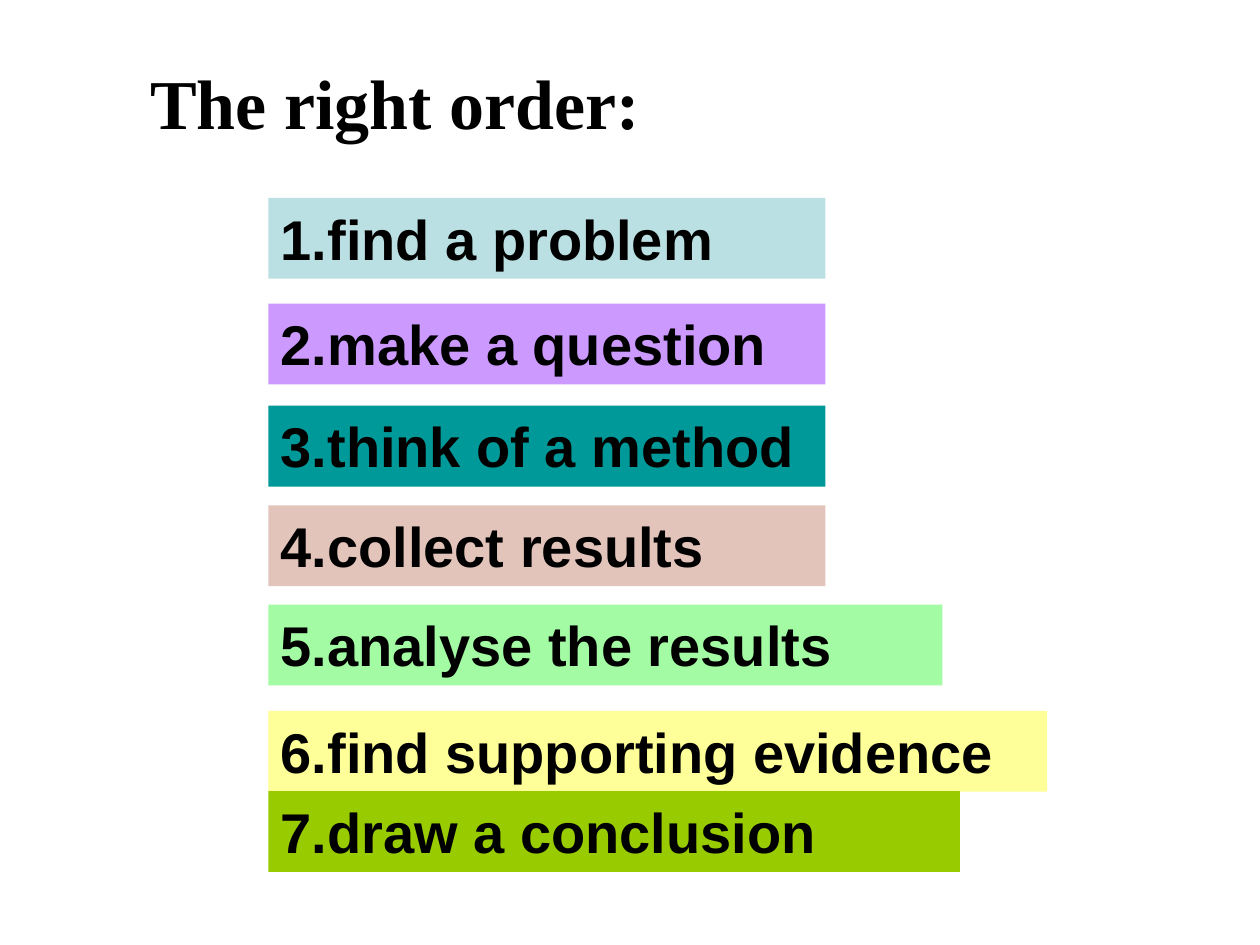
from dataclasses import dataclass

from pptx import Presentation
from pptx.dml.color import RGBColor
from pptx.enum.shapes import MSO_SHAPE
from pptx.enum.text import MSO_ANCHOR, MSO_AUTO_SIZE, PP_ALIGN
from pptx.slide import Slide
from pptx.text.text import TextFrame
from pptx.util import Cm, Pt

COLOURS = {
    "text": "000000",
    "problem": "BBE0E3",
    "question": "CC99FF",
    "method": "009999",
    "results": "E3C4BB",
    "analysis": "A3FBA3",
    "evidence": "FFFF99",
    "conclusion": "99CC00",
}
STEP_LEFT = 5.41
STEP_HEIGHT = 1.63


@dataclass(frozen=True)
class Step:
    wording: str
    colour: str
    top: float
    width: float = 11.23


STEPS = [
    Step("find a problem", "problem", 3.99),
    Step("make a question", "question", 6.12),
    Step("think of a method", "method", 8.18),
    Step("collect results", "results", 10.19),
    Step("analyse the results", "analysis", 12.19, 13.59),
    Step("find supporting evidence", "evidence", 14.33, 15.7),
    Step("draw a conclusion", "conclusion", 15.95, 13.94),
]


def write_line(frame: TextFrame, wording: str, font: str, size: int, spacing: float) -> None:
    frame.word_wrap = True
    frame.auto_size = MSO_AUTO_SIZE.NONE
    frame.vertical_anchor = MSO_ANCHOR.TOP
    line = frame.paragraphs[0]
    line.alignment = PP_ALIGN.LEFT
    line.line_spacing = spacing
    run = line.add_run()
    run.text = wording
    run.font.name = font
    run.font.size = Pt(size)
    run.font.bold = True
    run.font.color.rgb = RGBColor.from_string(COLOURS["text"])


def place_heading(slide: Slide, wording: str) -> None:
    heading = slide.shapes.title
    heading.left, heading.top = Cm(2.46), Cm(0.74)
    heading.width, heading.height = Cm(12.07), Cm(2.31)
    heading.text_frame.margin_left = Cm(0.57)
    write_line(heading.text_frame, wording, "Times New Roman", 40, 1.2)


def draw_step(slide: Slide, number: int, step: Step) -> None:
    bar = slide.shapes.add_shape(
        MSO_SHAPE.RECTANGLE, Cm(STEP_LEFT), Cm(step.top), Cm(step.width), Cm(STEP_HEIGHT)
    )
    bar.shadow.inherit = False
    bar.fill.solid()
    bar.fill.fore_color.rgb = RGBColor.from_string(COLOURS[step.colour])
    bar.line.fill.background()
    write_line(bar.text_frame, f"{number}.{step.wording}", "Arial", 32, 1.0)


def main() -> None:
    deck = Presentation()
    deck.slide_width, deck.slide_height = Cm(25.4), Cm(19.05)
    slide = deck.slides.add_slide(deck.slide_layouts.get_by_name("Title Only"))
    place_heading(slide, "The right order:")
    for number, step in enumerate(STEPS, start=1):
        draw_step(slide, number, step)
    deck.save("out.pptx")


if __name__ == "__main__":
    main()
